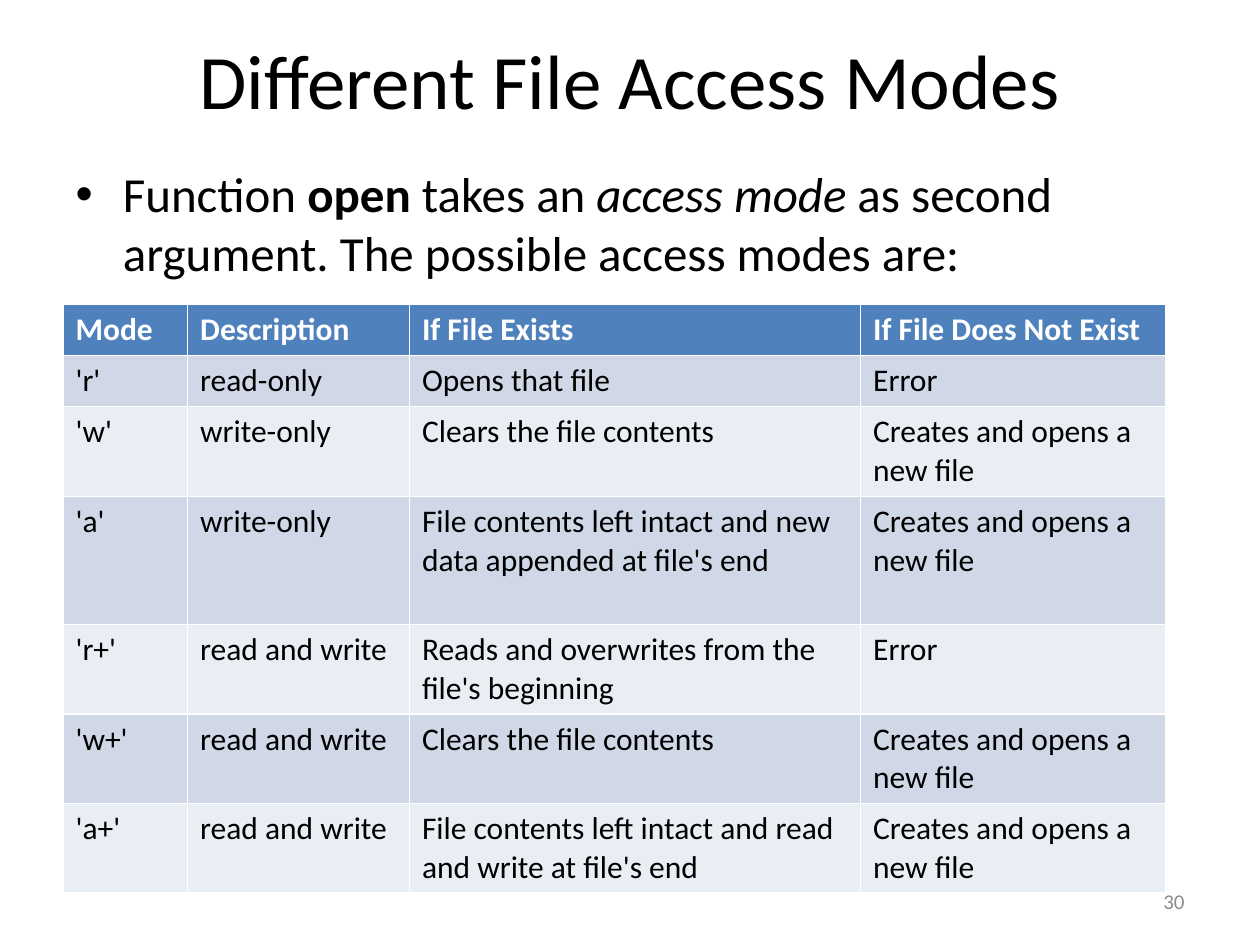
"""Build a slide with a table of file access modes."""
import pptx
import pptx.dml.color
import pptx.enum.text
import pptx.util

Pt = pptx.util.Pt
PP_ALIGN = pptx.enum.text.PP_ALIGN
MSO_ANCHOR = pptx.enum.text.MSO_ANCHOR

CREATES = "Creates and opens a new file"
CLEARS = "Clears the file contents"
ROWS = [
    ("Mode", "Description", "If File Exists", "If File Does Not Exist"),
    ("'r'", "read-only", "Opens that file", "Error"),
    ("'w'", "write-only", CLEARS, CREATES),
    ("'a'", "write-only", "File contents left intact and new data appended at file's end", CREATES),
    ("'r+'", "read and write", "Reads and overwrites from the file's beginning", "Error"),
    ("'w+'", "read and write", CLEARS, CREATES),
    ("'a+'", "read and write", "File contents left intact and read and write at file's end", CREATES),
]
COL_WIDTHS = [71.2, 126.8, 257.8, 174.2]
ROW_HEIGHTS = [29.2, 29.2, 51.2, 73.2, 51.2, 51.2, 51.2]


def rgb(value):
    return pptx.dml.color.RGBColor.from_string(value)


class Deck:
    def __init__(self, slide):
        self.s = slide
        self.font = "Calibri"
        self.ink = "000000"
        self.header = "4F81BD"
        self.bands = ["E9EDF4", "D0D8E8"]

    def style(self, p, size, color=None, bold=None):
        p.font.name = self.font
        p.font.size = Pt(size)
        p.font.color.rgb = rgb(color or self.ink)
        p.font.bold = bold

    def place(self, sp, left, top, width, height):
        sp.left, sp.top, sp.width, sp.height = map(Pt, (left, top, width, height))

    def title(self, text, *box):
        sp = self.s.shapes.title
        self.place(sp, *box)
        tf = sp.text_frame
        tf.text = text
        tf.vertical_anchor = MSO_ANCHOR.MIDDLE
        p = tf.paragraphs[0]
        p.alignment = PP_ALIGN.CENTER
        self.style(p, 44)

    def body(self, runs, *box):
        sp = self.s.placeholders[1]
        self.place(sp, *box)
        p = sp.text_frame.paragraphs[0]
        self.style(p, 28)
        for text, emphasis in runs:
            r = p.add_run()
            r.text = text
            if emphasis == "bold":
                r.font.bold = True
            elif emphasis == "italic":
                r.font.italic = True

    def table(self, rows, left, top, widths, heights):
        box = map(Pt, (left, top, sum(widths), sum(heights)))
        tbl = self.s.shapes.add_table(len(rows), len(widths), *box).table
        for col, width in zip(tbl.columns, widths):
            col.width = Pt(width)
        for i, (row, height) in enumerate(zip(rows, heights)):
            tbl.rows[i].height = Pt(height)
            for j, text in enumerate(row):
                cell = tbl.cell(i, j)
                cell.text = text
                cell.fill.solid()
                cell.fill.fore_color.rgb = rgb(self.bands[i % 2] if i else self.header)
                self.style(cell.text_frame.paragraphs[0], 18,
                           self.ink if i else "FFFFFF", i == 0)

    def number(self, text, *box):
        tf = self.s.shapes.add_textbox(*map(Pt, box)).text_frame
        tf.word_wrap = True
        tf.vertical_anchor = MSO_ANCHOR.MIDDLE
        tf.text = text
        p = tf.paragraphs[0]
        p.alignment = PP_ALIGN.RIGHT
        self.style(p, 12, "8C8C8C")


def main():
    prs = pptx.Presentation()
    prs.slide_width, prs.slide_height = Pt(720), Pt(540)
    deck = Deck(prs.slides.add_slide(prs.slide_layouts[1]))
    deck.title("Different File Access Modes", 36, 6, 648, 78)
    deck.body([("Function ", None), ("open", "bold"), (" takes an ", None),
               ("access mode ", "italic"),
               ("as second argument. The possible access modes are:", None)],
              36, 90, 648, 356.4)
    deck.number("30", 516, 500.5, 168, 28.8)
    deck.table(ROWS, 36, 174, COL_WIDTHS, ROW_HEIGHTS)
    prs.save("out.pptx")


if __name__ == "__main__":
    main()
